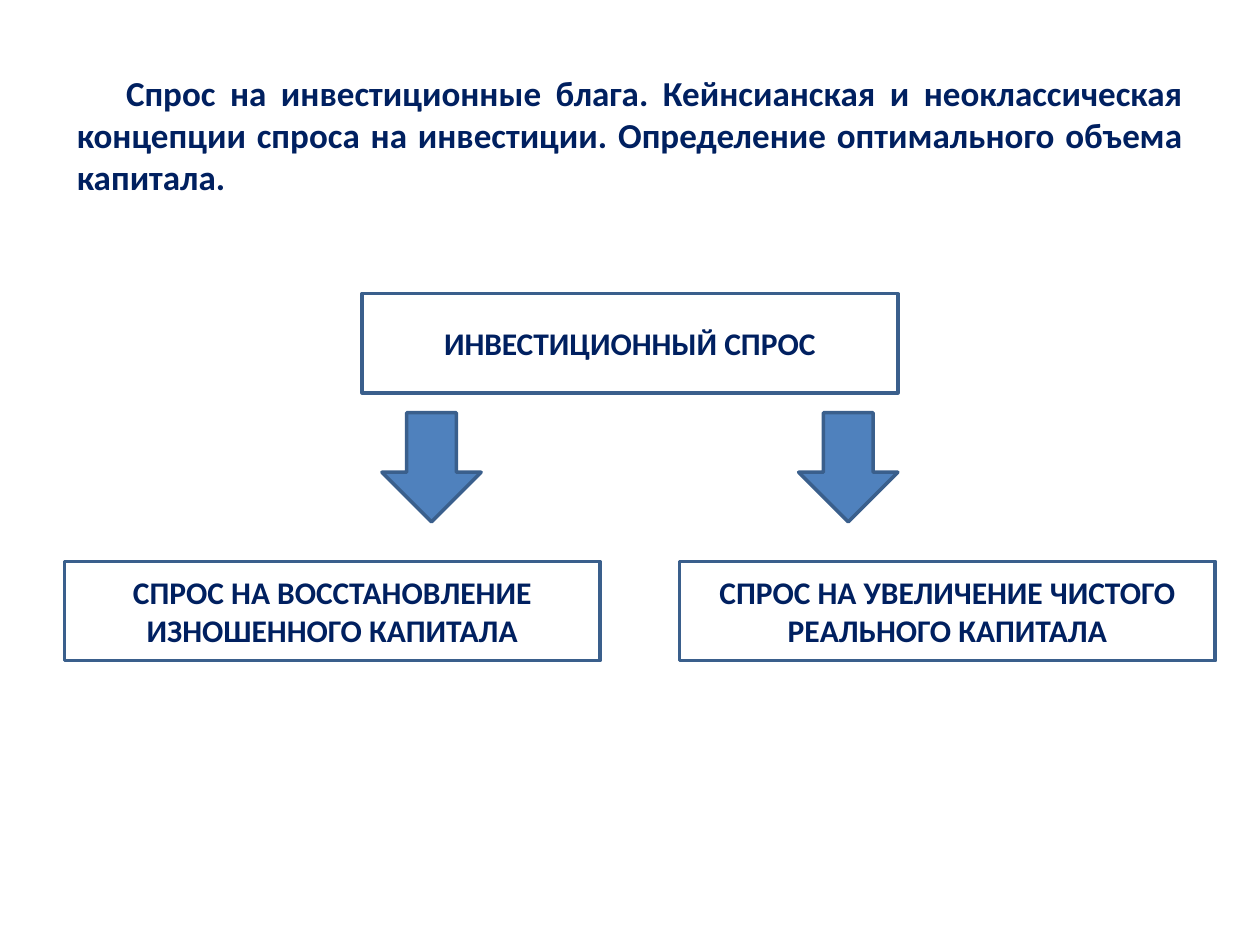
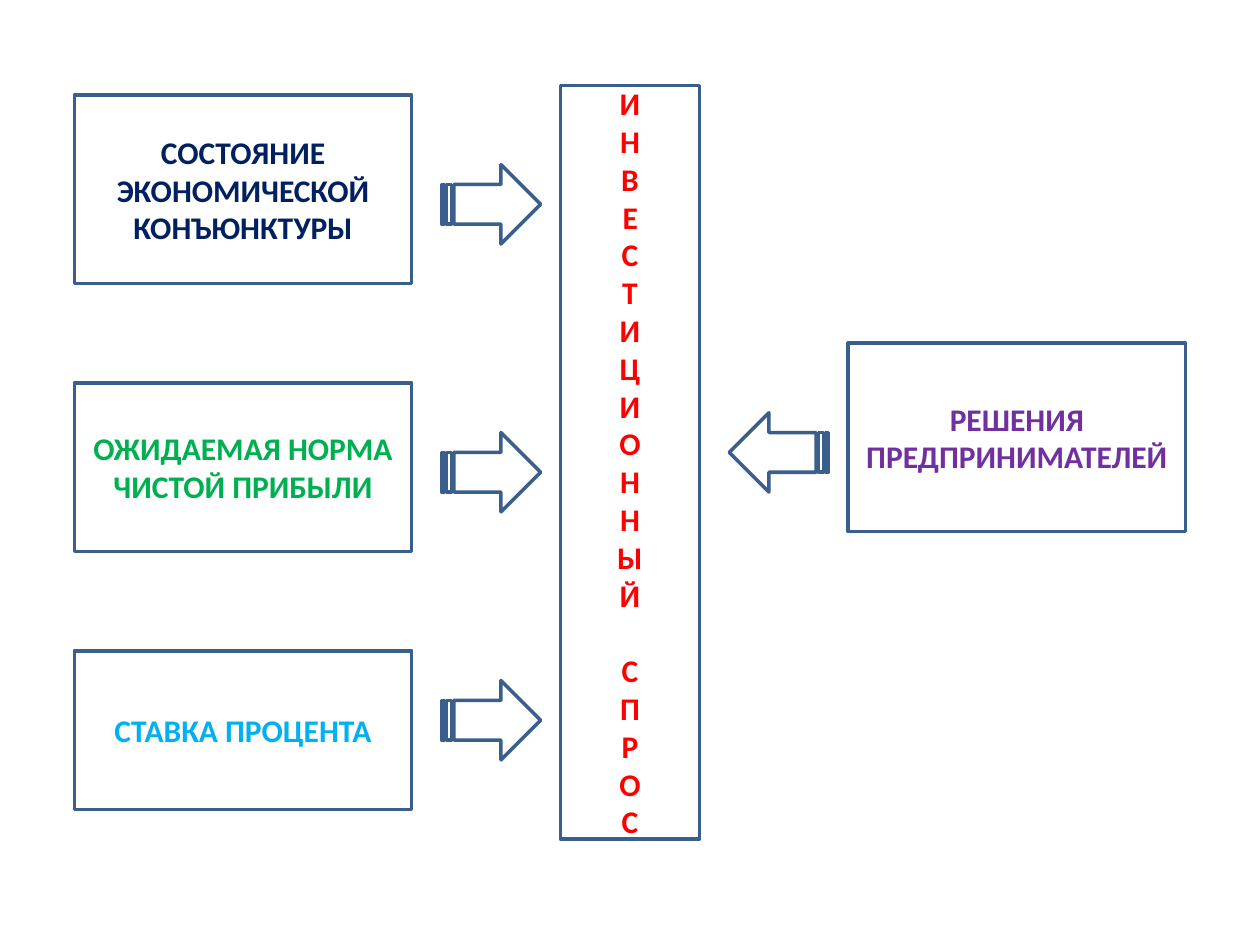
from dataclasses import dataclass
from typing import Any, Optional

from pptx import Presentation
from pptx.dml.color import RGBColor
from pptx.enum.shapes import MSO_SHAPE as Preset
from pptx.enum.text import MSO_ANCHOR as Anchor, PP_ALIGN as Align
from pptx.util import Cm, Inches, Length, Pt

NAVY = RGBColor(0x00, 0x20, 0x60)
RED = RGBColor(0xFF, 0x00, 0x00)
GREEN = RGBColor(0x00, 0xB0, 0x50)
SKY = RGBColor(0x00, 0xB0, 0xF0)
PURPLE = RGBColor(0x70, 0x30, 0xA0)
OUTLINE = RGBColor(0x3A, 0x5F, 0x8C)
STEEL = RGBColor(0x4F, 0x81, 0xBD)

STEP = Cm(0.2)
ORIGIN_COL, ORIGIN_ROW = 0.5, 0.6
BOX_FONT = {"name": "Calibri", "size": Pt(18), "bold": True}
HEADING_FONT = BOX_FONT | {"size": Pt(20)}
CENTRED = {"word_wrap": True, "vertical_anchor": Anchor.MIDDLE}
HEADING_INDENT = Inches(0.39)


@dataclass(frozen=True)
class Cell:
    col: int
    row: int
    cols: int
    rows: int

    def bounds(self) -> tuple[Length, ...]:
        spans = (self.col + ORIGIN_COL, self.row + ORIGIN_ROW, self.cols, self.rows)
        return tuple(Length(round(span * STEP)) for span in spans)


@dataclass(frozen=True)
class Box:
    cell: Cell
    words: str
    ink: RGBColor = NAVY
    stacked: bool = False


@dataclass(frozen=True)
class Arrow:
    cell: Cell
    preset: Preset = Preset.STRIPED_RIGHT_ARROW
    fill: Optional[RGBColor] = None
    turn: int = 0


def apply(target: Any, values: dict[str, Any]) -> None:
    for attribute, value in values.items():
        setattr(target, attribute, value)


def write(shape: Any, words: str, font: dict[str, Any], ink: RGBColor, align: Align) -> None:
    paragraph = shape.text_frame.paragraphs[0]
    paragraph.alignment = align
    run = paragraph.add_run()
    run.text = words
    apply(run.font, font)
    run.font.color.rgb = ink


def draw_outlined(slide: Any, preset: Preset, cell: Cell, fill: Optional[RGBColor] = None) -> Any:
    shape = slide.shapes.add_shape(preset, *cell.bounds())
    shape.shadow.inherit = False
    if fill is None:
        shape.fill.background()
    else:
        shape.fill.solid()
        shape.fill.fore_color.rgb = fill
    shape.line.color.rgb = OUTLINE
    shape.line.width = Pt(2)
    return shape


def draw_box(slide: Any, box: Box) -> None:
    shape = draw_outlined(slide, Preset.RECTANGLE, box.cell)
    apply(shape.text_frame, CENTRED)
    write(shape, box.words, BOX_FONT, box.ink, Align.CENTER)
    if box.stacked:
        shape.element.txBody.bodyPr.set("vert", "wordArtVert")


def draw_arrow(slide: Any, arrow: Arrow) -> None:
    draw_outlined(slide, arrow.preset, arrow.cell, arrow.fill).rotation = arrow.turn


def draw_heading(slide: Any, cell: Cell, words: str) -> None:
    heading = slide.shapes.add_textbox(*cell.bounds())
    heading.text_frame.word_wrap = True
    write(heading, words, HEADING_FONT, NAVY, Align.JUSTIFY)
    heading.element.txBody.p_lst[0].get_or_add_pPr().set("indent", str(HEADING_INDENT))


def draw_scheme(slide: Any, boxes: list[Box], arrows: list[Arrow]) -> None:
    for box in boxes:
        draw_box(slide, box)
    for arrow in arrows:
        draw_arrow(slide, arrow)


def build_demand_parts(slide: Any) -> None:
    draw_heading(
        slide,
        Cell(6, 6, 114, 84),
        "Спрос на инвестиционные блага. Кейнсианская и неоклассическая концепции "
        "спроса на инвестиции. Определение оптимального объема капитала.",
    )
    boxes = [
        Box(Cell(col, row, 54, 10), words)
        for col, row, words in (
            (36, 29, "ИНВЕСТИЦИОННЫЙ СПРОС"),
            (68, 56, "СПРОС НА УВЕЛИЧЕНИЕ ЧИСТОГО РЕАЛЬНОГО КАПИТАЛА"),
            (6, 56, "СПРОС НА ВОССТАНОВЛЕНИЕ ИЗНОШЕННОГО КАПИТАЛА"),
        )
    ]
    arrows = [Arrow(Cell(col, 41, 10, 11), Preset.DOWN_ARROW, STEEL) for col in (38, 80)]
    draw_scheme(slide, boxes, arrows)


def build_demand_factors(slide: Any) -> None:
    boxes = [Box(Cell(56, 8, 14, 76), "ИНВЕСТИЦИОННЫЙ СПРОС", RED, stacked=True)]
    boxes += [
        Box(Cell(col, row, 34, rows), words, ink)
        for col, row, rows, words, ink in (
            (7, 9, 19, "СОСТОЯНИЕ ЭКОНОМИЧЕСКОЙ КОНЪЮНКТУРЫ", NAVY),
            (7, 38, 17, "ОЖИДАЕМАЯ НОРМА ЧИСТОЙ ПРИБЫЛИ", GREEN),
            (7, 65, 16, "СТАВКА ПРОЦЕНТА", SKY),
            (85, 34, 19, "РЕШЕНИЯ ПРЕДПРИНИМАТЕЛЕЙ", PURPLE),
        )
    ]
    arrows = [Arrow(Cell(44, row, 10, 8)) for row in (16, 43, 68)]
    arrows.append(Arrow(Cell(73, 41, 10, 8), turn=180))
    draw_scheme(slide, boxes, arrows)


def main() -> None:
    deck = Presentation()
    apply(deck, {"slide_width": Inches(10), "slide_height": Inches(7.5)})
    blank = deck.slide_layouts[6]
    for build in (build_demand_parts, build_demand_factors):
        build(deck.slides.add_slide(blank))
    deck.save("out.pptx")


if __name__ == "__main__":
    main()
